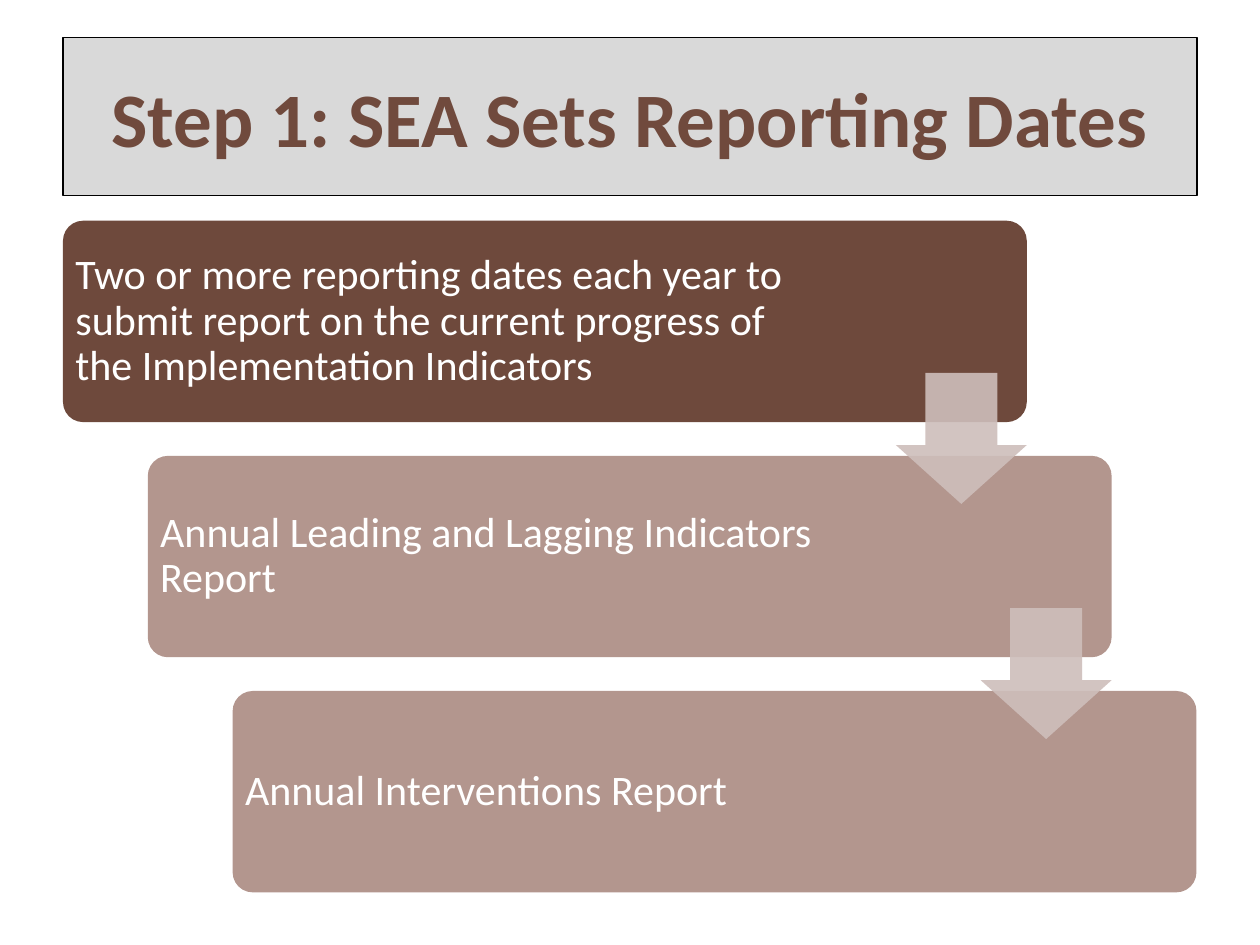
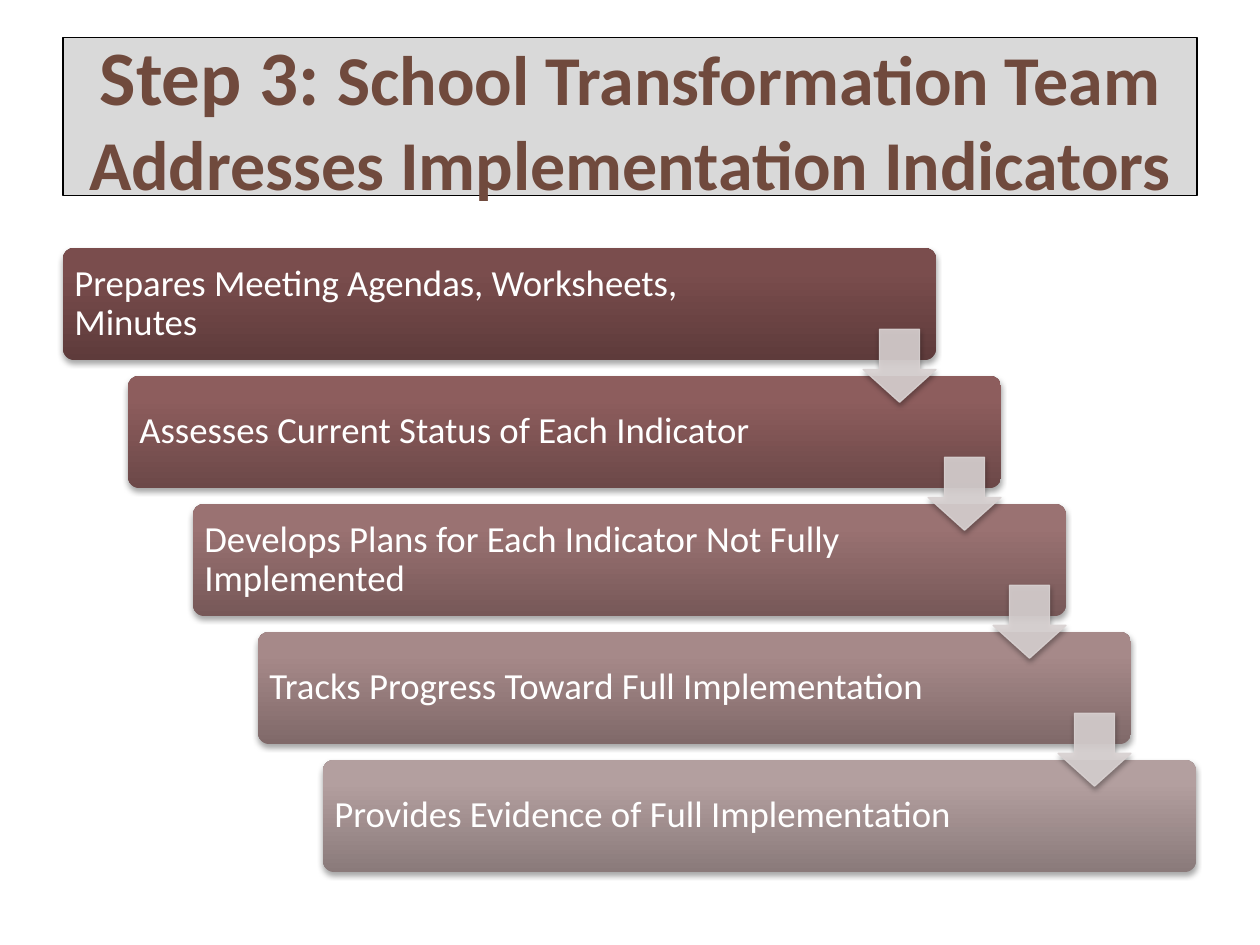
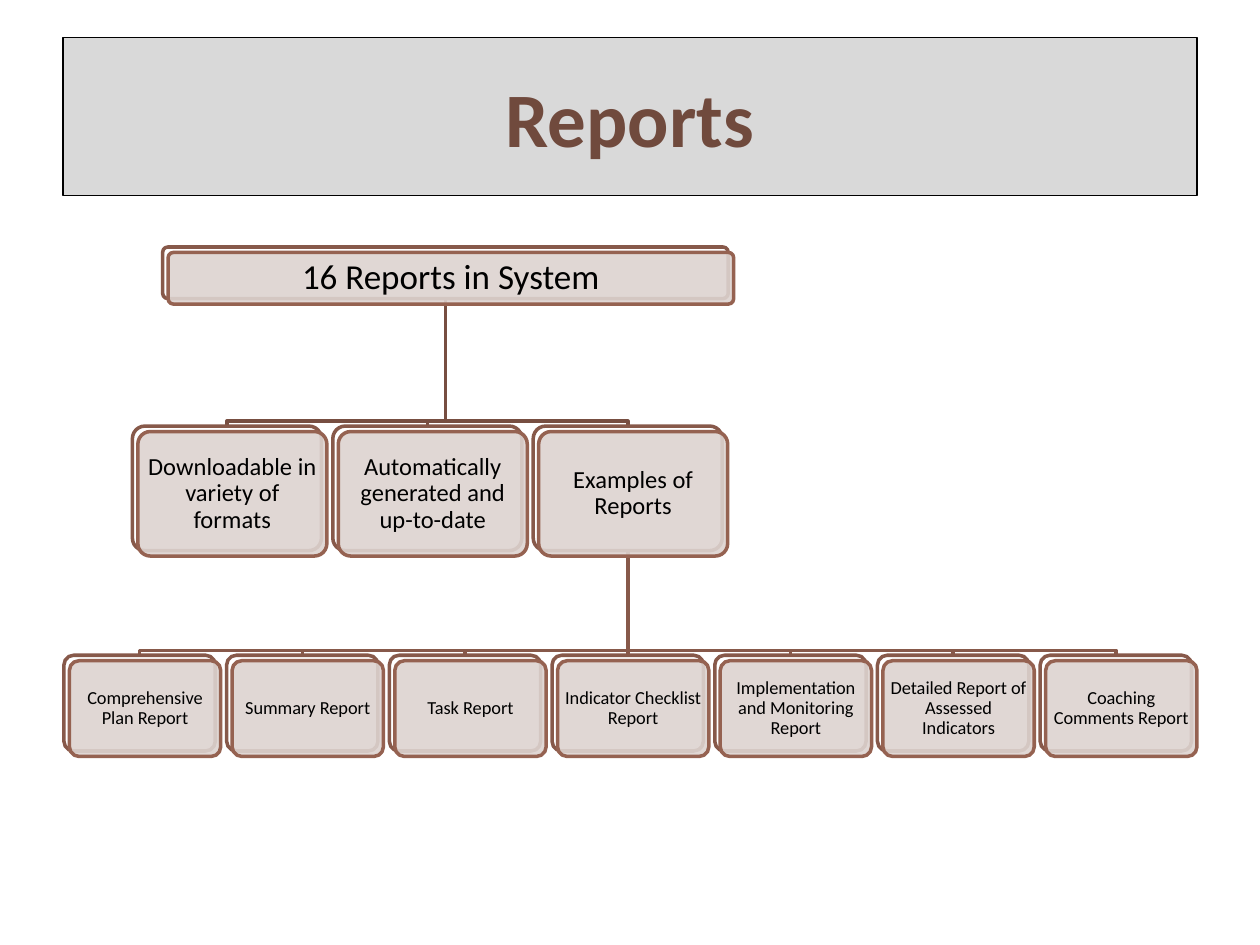
import copy
import dataclasses
from typing import Any, Optional

import pptx
import pptx.dml.color
import pptx.enum.shapes
import pptx.enum.text
import pptx.oxml
import pptx.oxml.ns
import pptx.util

Cm, Pt = pptx.util.Cm, pptx.util.Pt
qn = pptx.oxml.ns.qn
SHAPE = pptx.enum.shapes.MSO_SHAPE
ALIGN = pptx.enum.text.PP_ALIGN
MIDDLE = pptx.enum.text.MSO_ANCHOR.MIDDLE

FONT = "Calibri"
TITLE_BOX = (1.27, 0.76, 22.86, 3.18)
TITLE_FILL, TITLE_LINE, TITLE_TEXT = "D9D9D9", "000000", "704A3D"
WHITE, BLACK = "FFFFFF", "000000"
NODE_FILL, NODE_LINE, BACK_LINE = "DDD3D0", "956251", "87594A"
ROOT_LINK, CHILD_LINK = "774E41", "87594A"
OPACITY = 90
CORNER = 0.1
CORNER_INSET = 0.29 * CORNER  # text inset of a rounded corner, per unit of height
NODE_SHIFT = 0.11
BEND_GAP = 0.1


@dataclasses.dataclass
class Staircase:
    """Boxes stepping down to the right, joined by down arrows; lengths in cm."""
    left: float
    top: float
    width: float
    height: float
    step_x: float
    step_y: float
    text_width: float
    inset: float
    size: float
    arrow: float
    arrow_drop: float
    arrow_fill: str
    arrow_line: Optional[str] = None
    shadow: bool = False


@dataclasses.dataclass
class Level:
    """A row of equal boxes in the report tree; lengths in cm."""
    left: float
    top: float
    width: float
    height: float
    step: float
    inset: float
    size: float
    texts: list[str]

    def x(self, i: int) -> float:
        return self.left + i * self.step

    def center(self, i: int) -> float:
        return self.x(i) + self.width / 2

    @property
    def bottom(self) -> float:
        return self.top + self.height


def rgb(color: str) -> pptx.dml.color.RGBColor:
    return pptx.dml.color.RGBColor.from_string(color)


def apply(obj: Any, values: dict[str, Any]) -> None:
    for name, value in values.items():
        setattr(obj, name, value)


def place(s: Any, box: tuple[float, ...]) -> None:
    apply(s, dict(zip(("left", "top", "width", "height"), map(Cm, box))))


def set_line(s: Any, color: Optional[str], width: float) -> None:
    if color is None:
        s.line.fill.background()
    else:
        s.line.color.rgb = rgb(color)
        s.line.width = Pt(width)


def set_fill(s: Any, color: str) -> None:
    s.fill.solid()
    s.fill.fore_color.rgb = rgb(color)


def set_opacity(parent: Any, percent: int) -> None:
    """Make the solid fill directly below an spPr or ln element see-through."""
    color = parent.find(qn("a:solidFill")).find(qn("a:srgbClr"))
    color.makeelement(qn("a:alpha"))
    alpha = color.makeelement(qn("a:alpha"), {"val": str(percent * 1000)})
    color.append(alpha)


def set_gradient(s: Any, colors: tuple[str, ...]) -> None:
    """Run three colours from the bottom edge to the top edge."""
    s.fill.gradient()
    s.fill.gradient_angle = 90
    stops = s.element.spPr.find(qn("a:gradFill")).find(qn("a:gsLst"))
    stops.append(copy.deepcopy(stops[0]))
    for stop, position, color in zip(s.fill.gradient_stops, (0, 0.8, 1), colors):
        stop.position = position
        stop.color.rgb = rgb(color)


def add_shadow(s: Any) -> None:
    ns = pptx.oxml.ns.nsdecls("a")
    s.element.spPr.find(qn("a:effectLst")).append(pptx.oxml.parse_xml(
        f'<a:outerShdw {ns} blurRad="{Pt(3.1)}" dist="{Pt(1.8)}" dir="5400000" rotWithShape="0">'
        '<a:srgbClr val="000000"><a:alpha val="35000"/></a:srgbClr></a:outerShdw>'))


def add_shape(slide: Any, kind: Any, box: tuple[float, ...], adjustments: tuple[float, ...],
              line: Optional[str] = None, width: float = 0.75) -> Any:
    s = slide.shapes.add_shape(kind, *map(Cm, box))
    s.shadow.inherit = False
    for i, value in enumerate(adjustments):
        s.adjustments[i] = value
    set_line(s, line, width)
    return s


def add_run(p: Any, text: str, size: float, color: str, bold: bool = False) -> None:
    r = p.add_run()
    r.text = text
    apply(r.font, {"name": FONT, "size": Pt(size), "bold": bold})
    r.font.color.rgb = rgb(color)


def write(s: Any, text: str, size: float, color: str, align: Any, inset: float,
          height: float, spare: float = 0) -> None:
    """Fill a rounded box with text, keeping `spare` cm free on the right."""
    margin = inset - CORNER_INSET * height
    tf = s.text_frame
    apply(tf, {"word_wrap": True, "vertical_anchor": MIDDLE, "margin_left": Cm(margin),
               "margin_right": Cm(margin + spare), "margin_top": Cm(margin),
               "margin_bottom": Cm(margin)})
    p = tf.paragraphs[0]
    apply(p, {"alignment": align, "line_spacing": 0.9})
    add_run(p, text, size, color)


def add_titled_slide(prs: Any, runs: list[tuple[str, float]]) -> Any:
    slide = prs.slides.add_slide(prs.slide_layouts.get_by_name("Title Only"))
    title = slide.shapes.title
    place(title, TITLE_BOX)
    set_fill(title, TITLE_FILL)
    set_line(title, TITLE_LINE, 0.75)
    tf = title.text_frame
    apply(tf, {"word_wrap": True, "vertical_anchor": MIDDLE,
               "auto_size": pptx.enum.text.MSO_AUTO_SIZE.NONE})
    p = tf.paragraphs[0]
    p.alignment = ALIGN.CENTER
    for text, size in runs:
        add_run(p, text, size, TITLE_TEXT, bold=True)
    return slide


def draw_staircase(slide: Any, st: Staircase, steps: list[tuple[str, tuple[str, ...]]]) -> None:
    """Draw each step from its text and its one fill colour or three gradient colours."""
    for i, (text, colors) in enumerate(steps):
        box = (st.left + i * st.step_x, st.top + i * st.step_y, st.width, st.height)
        s = add_shape(slide, SHAPE.ROUNDED_RECTANGLE, box, (CORNER,))
        if len(colors) == 1:
            set_fill(s, colors[0])
        else:
            set_gradient(s, colors)
        if st.shadow:
            add_shadow(s)
        write(s, text, st.size, WHITE, ALIGN.LEFT, st.inset, st.height, st.width - st.text_width)
    for i in range(len(steps) - 1):
        box = (st.left + i * st.step_x + st.width - st.arrow,
               st.top + i * st.step_y + st.arrow_drop, st.arrow, st.arrow)
        s = add_shape(slide, SHAPE.DOWN_ARROW, box, (0.55, 0.45), st.arrow_line)
        # The preset lists the head length first and the shaft width second.
        s.adjustments[0], s.adjustments[1] = 0.55, 0.45
        set_fill(s, st.arrow_fill)
        set_opacity(s.element.spPr, OPACITY)
        if st.arrow_line:
            set_opacity(s.element.spPr.find(qn("a:ln")), OPACITY)
        if st.shadow:
            add_shadow(s)


def draw_links(slide: Any, parent: Level, index: int, children: Level, color: str) -> None:
    """Join one box to each box of the next level with a bent line."""
    x, bend = parent.center(index), children.top - BEND_GAP
    for i in range(len(children.texts)):
        end = children.center(i)
        if abs(end - x) < 0.05:
            s = slide.shapes.add_connector(pptx.enum.shapes.MSO_CONNECTOR.STRAIGHT, Cm(x),
                                           Cm(parent.bottom), Cm(x), Cm(children.top))
            spPr = s.element.spPr
            set_line(s, color, 2)
            spPr.append(spPr.makeelement(qn("a:effectLst")))
            continue
        builder = slide.shapes.build_freeform(Cm(x), Cm(parent.bottom))
        points = [(x, bend), (end, bend), (end, children.top)]
        builder.add_line_segments([(Cm(px), Cm(py)) for px, py in points], close=False)
        s = builder.convert_to_shape()
        s.shadow.inherit = False
        s.fill.background()
        set_line(s, color, 2)


def draw_level(slide: Any, level: Level) -> None:
    """Draw each box as a white card with a tinted card shifted over it."""
    for i, text in enumerate(level.texts):
        x, y = level.x(i), level.top
        size = (level.width, level.height)
        back = add_shape(slide, SHAPE.ROUNDED_RECTANGLE, (x, y, *size), (CORNER,), BACK_LINE, 2)
        set_fill(back, WHITE)
        front = add_shape(slide, SHAPE.ROUNDED_RECTANGLE,
                          (x + NODE_SHIFT, y + NODE_SHIFT, *size), (CORNER,), NODE_LINE, 2)
        set_fill(front, NODE_FILL)
        set_opacity(front.element.spPr, OPACITY)
        write(front, text, level.size, BLACK, ALIGN.CENTER, level.inset, level.height)


def build_dates(prs: Any) -> None:
    slide = add_titled_slide(prs, [("Step 1: SEA Sets Reporting Dates", 44)])
    stairs = Staircase(left=1.27, top=4.45, width=19.43, height=4.06, step_x=1.71, step_y=4.74,
                       text_width=15.1, inset=0.25, size=24, arrow=2.64, arrow_drop=3.07,
                       arrow_fill="CEBEBB")
    draw_staircase(slide, stairs, [
        ("Two or more reporting dates each year to submit report on the current progress of "
         "the Implementation Indicators", ("6E493C",)),
        ("Annual Leading and Lagging Indicators Report", ("B3968E",)),
        ("Annual Interventions Report", ("B3968E",)),
    ])


def build_indicators(prs: Any) -> None:
    slide = add_titled_slide(prs, [
        ("Step 3: ", 44), ("School Transformation Team Addresses Implementation Indicators", 40)])
    stairs = Staircase(left=1.27, top=5, width=17.6, height=2.26, step_x=1.31, step_y=2.58,
                       text_width=14.85, inset=0.23, size=21, arrow=1.47, arrow_drop=1.64,
                       arrow_fill="D9D2D2", arrow_line="D9D2D2", shadow=True)
    draw_staircase(slide, stairs, [
        ("Prepares Meeting Agendas, Worksheets, Minutes", ("5E3B3B", "7A4D4D", "7C4C4C")),
        ("Assesses Current Status of Each Indicator", ("6C4848", "8D5D5D", "8E5C5C")),
        ("Develops Plans for Each Indicator Not Fully Implemented",
         ("775858", "9A7272", "9C7272")),
        ("Tracks Progress Toward Full Implementation", ("806969", "A68989", "A78989")),
        ("Provides Evidence of Full Implementation", ("8A7A7A", "B39F9F", "B49F9F")),
    ])


def build_reports(prs: Any) -> None:
    slide = add_titled_slide(prs, [("Reports", 44)])
    root = Level(3.28, 4.98, 11.4, 1.04, 0, 0.2, 20, ["16 Reports in System"])
    features = Level(2.67, 8.59, 3.81, 2.51, 4.04, 0.15, 14, [
        "Downloadable in variety of formats", "Automatically generated and up-to-date",
        "Examples of Reports"])
    examples = Level(1.29, 13.21, 3.05, 1.93, 3.28, 0.13, 10.5, [
        "Comprehensive Plan Report", "Summary Report", "Task Report",
        "Indicator Checklist Report", "Implementation and Monitoring Report",
        "Detailed Report of Assessed Indicators", "Coaching Comments Report"])
    draw_links(slide, features, 2, examples, CHILD_LINK)
    draw_links(slide, root, 0, features, ROOT_LINK)
    for level in (root, features, examples):
        draw_level(slide, level)


def main() -> None:
    prs = pptx.Presentation()
    prs.slide_width, prs.slide_height = Cm(25.4), Cm(19.05)
    build_dates(prs)
    build_indicators(prs)
    build_reports(prs)
    prs.save("out.pptx")


if __name__ == "__main__":
    main()
